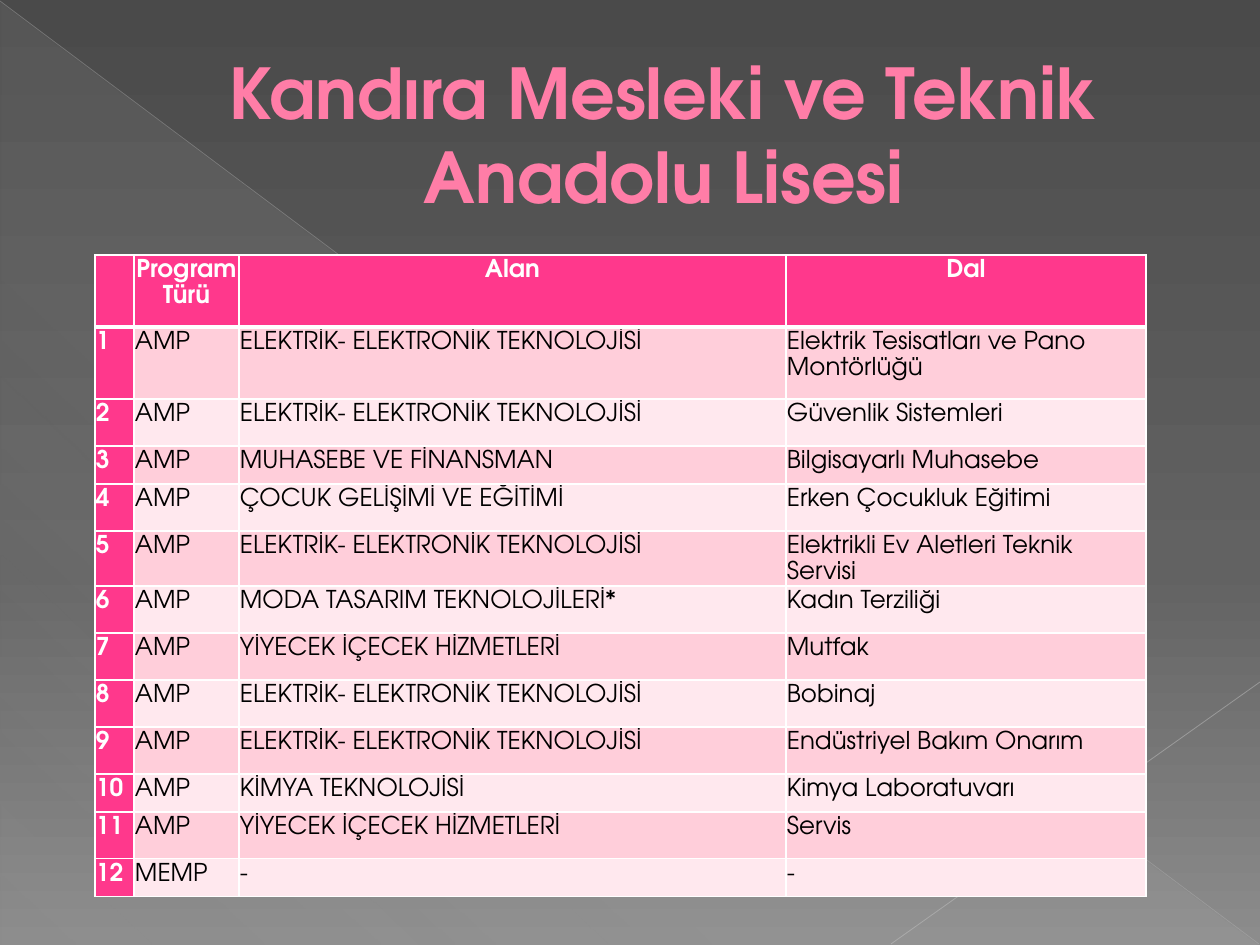
from lxml import etree
from pptx import Presentation
from pptx import util as u
from pptx.dml.color import RGBColor
from pptx.enum import shapes, text
from pptx.oxml import ns

PX = 914400 / 126
FONT = "TeX Gyre Adventor"
TITLE_PINK = RGBColor(0xFF, 0x7D, 0xA7)
TITLE_EDGE = RGBColor(0xB1, 0x27, 0x61)
HOT_PINK = RGBColor(0xFF, 0x38, 0x8C)
BANDS = [RGBColor(0xFF, 0xCE, 0xDA), RGBColor(0xFF, 0xE8, 0xEE)]
WHITE = RGBColor(0xFF, 0xFF, 0xFF)
BLACK = RGBColor(0, 0, 0)
LIGHT = RGBColor(0xD2, 0xD2, 0xD2)
BACKGROUND = [(0, RGBColor(0x4A, 0x4A, 0x4A), 100),
              (60, RGBColor(0x62, 0x62, 0x62), 100),
              (100, RGBColor(0x8C, 0x8C, 0x8C), 100)]
SHEEN = [(0, LIGHT, 10), (70, LIGHT, 8), (100, LIGHT, 1)]


def add(parent, tag, **values):
    return etree.SubElement(parent, ns.qn(tag), {k: str(v) for k, v in values.items()})


def set_gradient(fill, owner, stops, angle):
    fill.gradient()
    gradient = owner.find(".//" + ns.qn("a:gradFill"))
    for child in list(gradient):
        gradient.remove(child)
    stop_list = add(gradient, "a:gsLst")
    for position, color, opacity in stops:
        stop = add(stop_list, "a:gs", pos=position * 1000)
        tint = add(stop, "a:srgbClr", val=color)
        add(tint, "a:alpha", val=opacity * 1000)
    add(gradient, "a:lin", ang=angle * 60000, scaled=0)


deck = Presentation()
deck.slide_width, deck.slide_height = u.Inches(10), u.Inches(7.5)
page = deck.slides.add_slide(deck.slide_layouts[5])

# Background, sheen and thin lines
set_gradient(page.background.fill, page.background._cSld, BACKGROUND, 90)
sheen = page.shapes.add_shape(shapes.MSO_SHAPE.RIGHT_TRIANGLE,
                              *[round(v * PX) for v in (1, 2, 1258, 943)])
sheen.shadow.inherit = False
sheen.line.fill.background()
set_gradient(sheen.fill, sheen._element.spPr, SHEEN, 133)

for ends, color, width, opacity in [
    ((0, 1, 1259, 944), RGBColor(0xBF, 0xBF, 0xBF), 0.39, 35),
    ((1260, 682, 891, 944), RGBColor(0xC6, 0xC6, 0xC6), 0.47, 45),
]:
    line = page.shapes.add_connector(shapes.MSO_CONNECTOR.STRAIGHT,
                                     *[round(v * PX) for v in ends])
    line.line.color.rgb = color
    line.line.width = u.Pt(width)
    add(line._element.find(".//" + ns.qn("a:srgbClr")), "a:alpha", val=opacity * 1000)
    add(line._element.spPr, "a:effectLst")

# Title, in front of the background shapes
title = page.shapes.title
page.shapes._spTree.append(title._element)
for name, value in dict(left=63, top=37, width=1134, height=193).items():
    setattr(title, name, round(value * PX))
title.text_frame.word_wrap = True
title.text_frame.auto_size = text.MSO_AUTO_SIZE.NONE
title.text_frame.vertical_anchor = text.MSO_ANCHOR.MIDDLE
para = title.text_frame.paragraphs[0]
para.alignment = text.PP_ALIGN.CENTER
para._p.get_or_add_pPr().set("marL", str(round(67 * PX)))
span = para.add_run()
span.text = "Kandıra Mesleki ve Teknik Anadolu Lisesi"
for name, value in dict(name=FONT, size=u.Pt(40), bold=True).items():
    setattr(span.font, name, value)
span.font.color.rgb = TITLE_PINK
edge = add(span.font._element, "a:ln", w=u.Pt(0.5))
add(add(edge, "a:solidFill"), "a:srgbClr", val=TITLE_EDGE)
span.font._element.insert(0, edge)

# Table of programmes
ELECTRIC = "ELEKTRİK- ELEKTRONİK TEKNOLOJİSİ"
FOOD = "YİYECEK İÇECEK HİZMETLERİ"
programmes = [
    ("AMP", ELECTRIC, "Elektrik Tesisatları ve Pano Montörlüğü"),
    ("AMP", ELECTRIC, "Güvenlik Sistemleri"),
    ("AMP", "MUHASEBE VE FİNANSMAN", "Bilgisayarlı Muhasebe"),
    ("AMP", "ÇOCUK GELİŞİMİ VE EĞİTİMİ", "Erken Çocukluk Eğitimi"),
    ("AMP", ELECTRIC, "Elektrikli Ev Aletleri Teknik Servisi"),
    ("AMP", "MODA TASARIM TEKNOLOJİLERİ*", "Kadın Terziliği"),
    ("AMP", FOOD, "Mutfak"),
    ("AMP", ELECTRIC, "Bobinaj"),
    ("AMP", ELECTRIC, "Endüstriyel Bakım Onarım"),
    ("AMP", "KİMYA TEKNOLOJİSİ", "Kimya Laboratuvarı"),
    ("AMP", FOOD, "Servis"),
    ("MEMP", "-", "-"),
]
rows = [("", "Program Türü", "Alan", "Dal")]
rows += [(str(i), *programme) for i, programme in enumerate(programmes, 1)]
widths = [39, 105, 547, 360]
heights = [72, 72, 47, 38, 47, 55, 47, 47, 47, 47, 38, 47, 38]
frame = page.shapes.add_table(len(rows), len(widths), round(95 * PX), round(255 * PX),
                              round(sum(widths) * PX), round(sum(heights) * PX))
table = frame.table
for column, width in zip(table.columns, widths):
    column.width = round(width * PX)
for row, height in zip(table.rows, heights):
    row.height = round(height * PX)

for r, words in enumerate(rows):
    for c, word in enumerate(words):
        cell = table.cell(r, c)
        strong = r == 0 or c == 0
        for side in ("left", "top", "right", "bottom"):
            setattr(cell, "margin_" + side, round(PX))
        # Borders come before the fill in the cell properties
        for side in "LRTB":
            thick = (r == 0 and side == "B") or (r == 1 and side == "T")
            border = add(cell._tc.get_or_add_tcPr(), "a:ln" + side, w=u.Pt(3 if thick else 1))
            add(add(border, "a:solidFill"), "a:srgbClr", val=WHITE)
        cell.fill.solid()
        cell.fill.fore_color.rgb = HOT_PINK if strong else BANDS[(r - 1) % 2]
        if not word:
            continue
        para = cell.text_frame.paragraphs[0]
        para.alignment = text.PP_ALIGN.CENTER if r == 0 else text.PP_ALIGN.LEFT
        para.line_spacing = 1.15
        span = para.add_run()
        span.text = word
        for name, value in dict(name=FONT, size=u.Pt(14), bold=strong).items():
            setattr(span.font, name, value)
        span.font.color.rgb = WHITE if strong else BLACK

deck.save("out.pptx")
